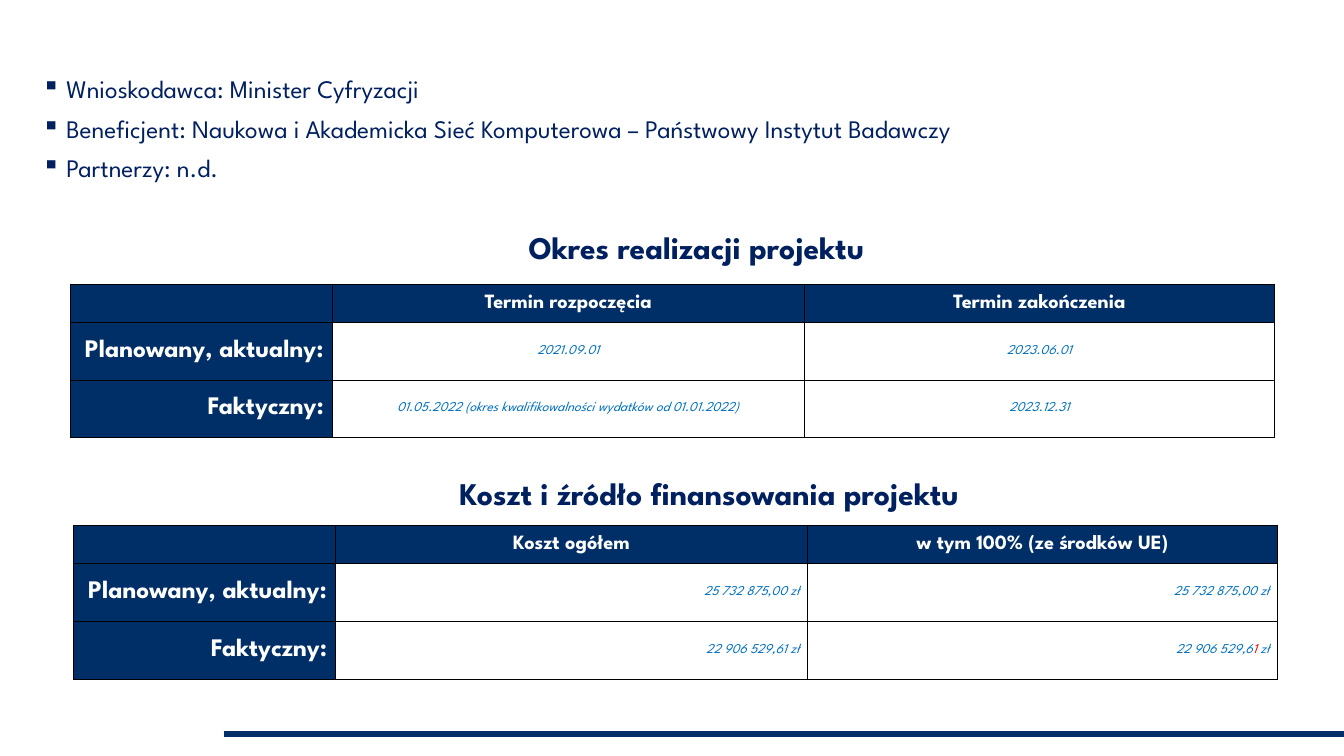
"""Build the project slide with its parties, dates and funding."""
import dataclasses

import pptx
import pptx.dml.color
import pptx.enum.text
import pptx.oxml
import pptx.oxml.ns
import pptx.util

Inches = pptx.util.Inches
Pt = pptx.util.Pt
ALIGN = pptx.enum.text.PP_ALIGN
MIDDLE = pptx.enum.text.MSO_ANCHOR.MIDDLE


@dataclasses.dataclass(frozen=True)
class Theme:
    font: str = "League Spartan"
    navy: str = "002F67"
    ink: str = "002060"
    blue: str = "0070C0"
    red: str = "FF0000"
    white: str = "FFFFFF"
    black: str = "000000"
    title: float = 28
    body: float = 22.4
    head: float = 18
    value: float = 12


THEME = Theme()
COLS = (3.23, 5.83, 5.8)
ROWS = (0.47, 0.71, 0.71)


def rgb(code):
    return pptx.dml.color.RGBColor.from_string(code)


def add_xml(parent, text):
    ns = pptx.oxml.ns.nsdecls("a")
    parent.append(pptx.oxml.parse_xml(text.replace("/>", f" {ns}/>", 1)
                                      if text.endswith("/>") and text.count("<") == 1
                                      else text.replace(">", f" {ns}>", 1)))


def add_run(para, text, size, color, bold=False, italic=False):
    run = para.add_run()
    run.text = text
    font = run.font
    font.name, font.size = THEME.font, Pt(size)
    font.bold, font.italic = bold, italic
    font.color.rgb = rgb(color)


def add_box(slide, left, top, width, height):
    box = slide.shapes.add_textbox(*map(Inches, (left, top, width, height)))
    box.text_frame.word_wrap = True
    return box.text_frame


def add_list(slide, lines):
    frame = add_box(slide, 0.42, 0.86, 15.23, 1.46)
    frame.auto_size = pptx.enum.text.MSO_AUTO_SIZE.SHAPE_TO_FIT_TEXT
    for index, line in enumerate(lines):
        para = frame.add_paragraph() if index else frame.paragraphs[0]
        props = para._p.get_or_add_pPr()
        props.set("marL", str(Inches(0.3)))
        props.set("indent", str(Inches(-0.3)))
        add_xml(props, '<a:buChar char="▪"/>')
        if index:
            para.space_before = Pt(8)
        add_run(para, line, THEME.body, THEME.ink)


def add_title(slide, left, top, text):
    para = add_box(slide, left, top, 9.31, 0.82).paragraphs[0]
    para.alignment = ALIGN.CENTER
    add_run(para, text, THEME.title, THEME.ink, bold=True)


def add_edges(cell):
    props = cell._tc.get_or_add_tcPr()
    for index, side in enumerate(("lnL", "lnR", "lnT", "lnB")):
        edge = pptx.oxml.parse_xml(
            f'<a:{side} {pptx.oxml.ns.nsdecls("a")} w="{Pt(1)}"><a:solidFill>'
            f'<a:srgbClr val="{THEME.black}"/></a:solidFill></a:{side}>')
        props.insert(index, edge)


def fill_cell(cell, runs, row, col, align):
    cell.vertical_anchor = MIDDLE
    cell.fill.solid()
    para = cell.text_frame.paragraphs[0]
    if row and col:
        cell.fill.fore_color.rgb = rgb(THEME.white)
        para.alignment = align
        for text, color in runs:
            add_run(para, text, THEME.value, color, italic=True)
    else:
        cell.fill.fore_color.rgb = rgb(THEME.navy)
        para.alignment = ALIGN.RIGHT if row else ALIGN.CENTER
        size = THEME.body if row else THEME.head
        para.font.size = Pt(size)
        for text, _ in runs:
            add_run(para, text, size, THEME.white, bold=True)
    add_edges(cell)


def add_grid(slide, left, top, heads, plan, fact, align):
    shape = slide.shapes.add_table(
        len(ROWS), len(COLS), Inches(left), Inches(top),
        Inches(sum(COLS)), Inches(sum(ROWS)))
    table = shape.table
    table.first_row = table.horz_banding = False
    for col, width in enumerate(COLS):
        table.columns[col].width = Inches(width)
    data = (("", *heads), ("Planowany, aktualny:", *plan), ("Faktyczny:", *fact))
    for row, (height, items) in enumerate(zip(ROWS, data)):
        table.rows[row].height = Inches(height)
        for col, item in enumerate(items):
            runs = [(item, THEME.blue)] if isinstance(item, str) else item
            if item:
                fill_cell(table.cell(row, col), runs, row, col, align)
            else:
                fill_cell(table.cell(row, col), [], row, col, align)


def add_rule(slide):
    rule = slide.shapes.add_connector(
        pptx.enum.shapes.MSO_CONNECTOR.STRAIGHT,
        Inches(2.76), Inches(9.06), Inches(16.59), Inches(9.06))
    rule.line.color.rgb = rgb(THEME.navy)
    rule.line.width = Pt(5.25)
    add_xml(rule._element.spPr, "<a:effectLst/>")


def main():
    deck = pptx.Presentation()
    deck.slide_width, deck.slide_height = Inches(16.59), Inches(9.33)
    slide = deck.slides.add_slide(deck.slide_layouts[6])
    add_rule(slide)
    add_list(slide, (
        "Wnioskodawca: Minister Cyfryzacji",
        "Beneficjent: Naukowa i Akademicka Sieć Komputerowa – Państwowy Instytut Badawczy",
        "Partnerzy: n.d."))
    add_title(slide, 3.94, 2.76, "Okres realizacji projektu")
    add_grid(slide, 0.87, 3.51,
             ("Termin rozpoczęcia", "Termin zakończenia"),
             ("2021.09.01", "2023.06.01"),
             ("01.05.2022 (okres kwalifikowalności wydatków od 01.01.2022)", "2023.12.31"),
             ALIGN.CENTER)
    add_title(slide, 4.1, 5.8, "Koszt i źródło finansowania projektu")
    cost = "25 732 875,00 zł"
    spent = [("22 906 529,6", THEME.blue), ("1", THEME.red), (" zł", THEME.blue)]
    add_grid(slide, 0.91, 6.49,
             ("Koszt ogółem", "w tym 100% (ze środków UE)"),
             (cost, cost), ("22 906 529,61 zł", spent), ALIGN.RIGHT)
    deck.save("out.pptx")


if __name__ == "__main__":
    main()
